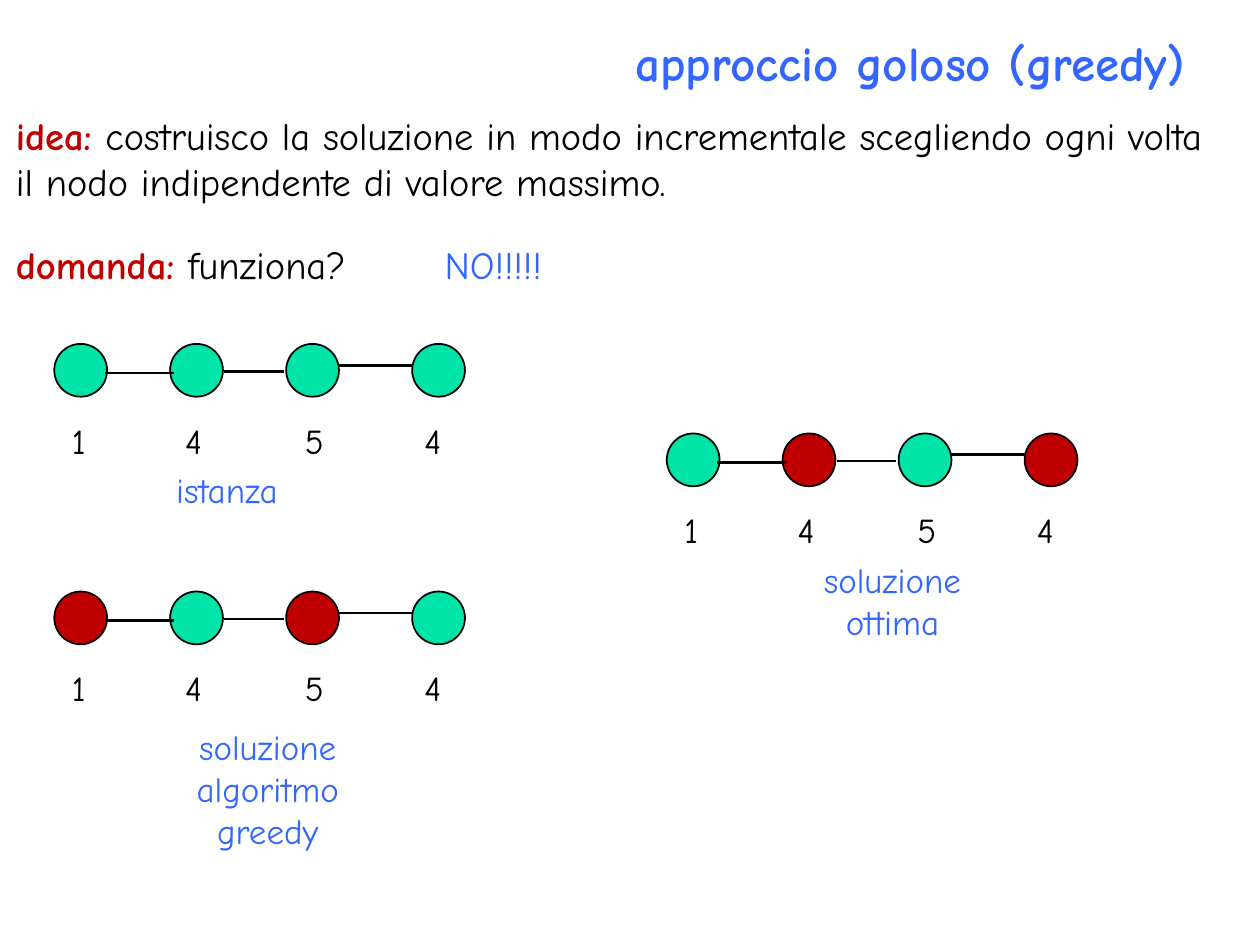
from lxml.etree import SubElement
from pptx import Presentation
from pptx.dml.color import RGBColor
from pptx.enum.shapes import MSO_CONNECTOR, MSO_SHAPE
from pptx.enum.text import PP_ALIGN
from pptx.oxml.ns import qn
from pptx.util import Pt

BLUE = RGBColor(0x33, 0x66, 0xFF)
RED = RGBColor(0xC0, 0x00, 0x00)
GREEN = RGBColor(0x00, 0xE4, 0xA8)
BLACK = RGBColor(0x00, 0x00, 0x00)
FONT = "Comic Neue"

TITLE = "approccio goloso (greedy)"
STATEMENTS = [
    ("idea: ", "costruisco la soluzione in modo incrementale scegliendo "
     "ogni volta il nodo indipendente di valore massimo.", 60.5, 60.5),
    ("domanda: ", "funziona?", 134, 34),
]
ANSWER = "NO!!!!!"

VALUES = ["1", "4", "5", "4"]
GRAPHS = [
    {"origin": (31, 196.5), "chosen": (), "grouped": False},
    {"origin": (31, 338), "chosen": (0, 2), "grouped": True},
    {"origin": (381, 247.7), "chosen": (1, 3), "grouped": True},
]
CAPTIONS = [
    ("istanza", (93.6, 264.2, 90.7, 31.7), PP_ALIGN.LEFT),
    ("soluzione algoritmo greedy", (82, 411, 142, 80), PP_ALIGN.CENTER),
    ("soluzione ottima", (439, 315.4, 142, 55.4), PP_ALIGN.CENTER),
]

NODE_SIZE = 30.2
NODE_LEFTS = [0, 66.2, 132.5, 204.5]
VALUE_LEFTS = [2.9, 68.4, 137.5, 205.2]
VALUE_DROP = 39.6
VALUE_SIZE = (22.3, 31.7)
EDGES = [(68.4, 28.8, 16.6), (97.2, 131, 15.8), (204.5, 162, 12.2)]


def add_text(parent, text, box, size=20, color=BLACK, bold=False,
             align=PP_ALIGN.LEFT, lead="", inset=7.2):
    frame = parent.shapes.add_textbox(*map(Pt, box)).text_frame
    frame.word_wrap = True
    frame.margin_left = frame.margin_right = Pt(inset)
    paragraph = frame.paragraphs[0]
    paragraph.alignment = align
    pieces = [(lead, RED, True)] if lead else []
    for words, tint, heavy in pieces + [(text, color, bold)]:
        run = paragraph.add_run()
        run.text = words
        run.font.name = FONT
        run.font.size = Pt(size)
        run.font.bold = heavy
        run.font.color.rgb = tint


def add_node(parent, left, top, color):
    node = parent.shapes.add_shape(
        MSO_SHAPE.OVAL, Pt(left), Pt(top), Pt(NODE_SIZE), Pt(NODE_SIZE))
    node.shadow.inherit = False
    node.fill.solid()
    node.fill.fore_color.rgb = color
    node.line.color.rgb = BLACK
    node.line.width = Pt(1)


def add_edge(parent, start, end, y):
    edge = parent.shapes.add_connector(
        MSO_CONNECTOR.STRAIGHT, Pt(start), Pt(y), Pt(end), Pt(y))
    edge.line.color.rgb = BLACK
    edge.line.width = Pt(1.5)
    SubElement(edge._element.spPr, qn("a:effectLst"))


def add_graph(slide, origin, chosen, grouped):
    parent = slide.shapes.add_group_shape() if grouped else slide
    x, y = origin
    for index, left in enumerate(NODE_LEFTS):
        add_node(parent, x + left, y, RED if index in chosen else GREEN)
    for start, end, drop in EDGES:
        add_edge(parent, x + start, x + end, y + drop)
    for value, left in zip(VALUES, VALUE_LEFTS):
        add_text(parent, value, (x + left, y + VALUE_DROP, *VALUE_SIZE),
                 align=PP_ALIGN.CENTER, inset=0)


def main():
    deck = Presentation()
    deck.slide_width, deck.slide_height = Pt(720), Pt(540)
    slide = deck.slides.add_slide(deck.slide_layouts[6])

    add_text(slide, TITLE, (36, 15, 648, 72), size=28, color=BLUE,
             bold=True, align=PP_ALIGN.RIGHT)
    for lead, statement, top, height in STATEMENTS:
        add_text(slide, statement, (2, top, 706, height), size=22, lead=lead)
    add_text(slide, ANSWER, (247, 134, 108, 38), size=22, color=BLUE)

    for graph in GRAPHS:
        add_graph(slide, **graph)
    for caption, box, align in CAPTIONS:
        add_text(slide, caption, box, color=BLUE, align=align)

    deck.save("out.pptx")


if __name__ == "__main__":
    main()
